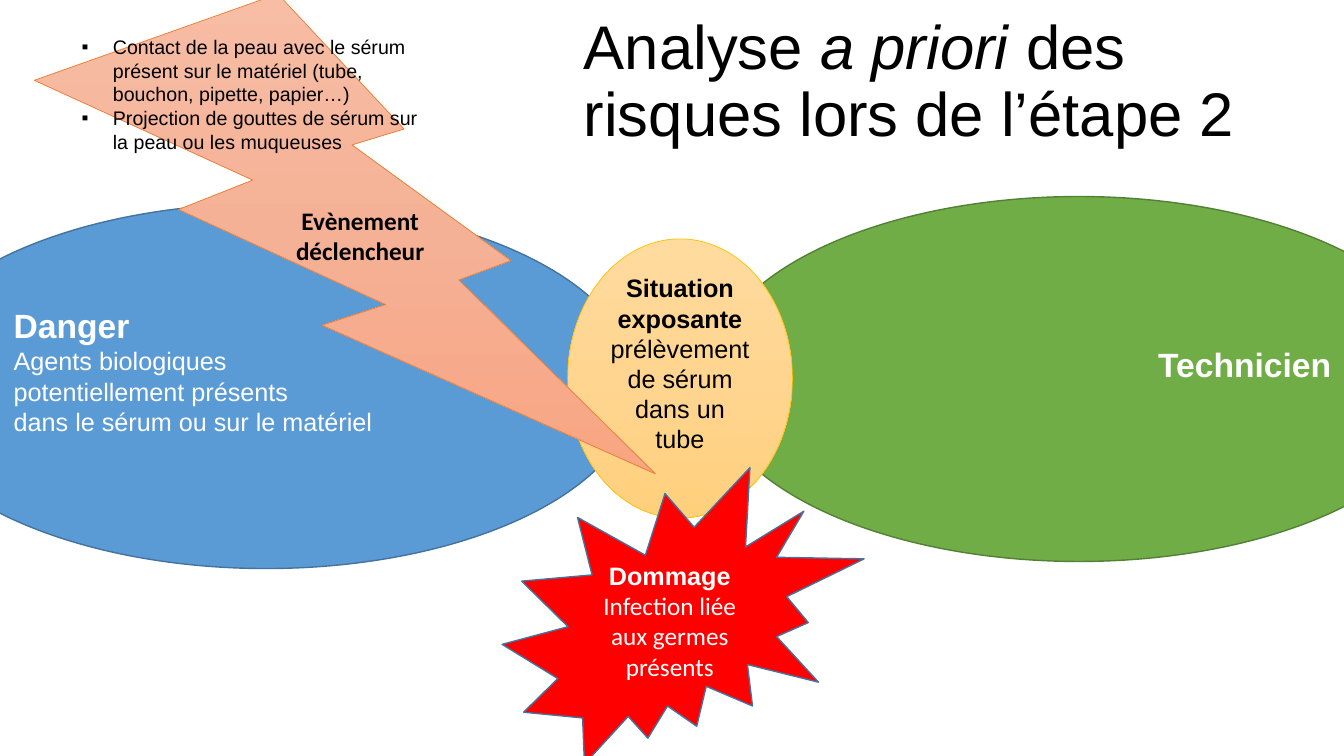
from copy import deepcopy
from dataclasses import dataclass

from lxml import etree
from pptx import Presentation
from pptx.dml.color import RGBColor
from pptx.enum.shapes import MSO_SHAPE as Preset
from pptx.enum.text import MSO_ANCHOR as Anchor, MSO_AUTO_SIZE as AutoSize, PP_ALIGN as Align
from pptx.oxml.ns import qn
from pptx.util import Inches, Pt


@dataclass(frozen=True)
class Theme:
    font: str = "Arial"
    alternate_font: str = "Calibri"
    black: str = "000000"
    white: str = "FFFFFF"
    blue: str = "5B9BD5"
    blue_line: str = "43739E"
    green: str = "70AD47"
    green_line: str = "538035"
    red: str = "FF0000"
    yellow: tuple = ("FFDB9E", "FFD590", "FFD07C")
    yellow_line: str = "FFC000"
    orange: tuple = ("F7BDA5", "F5B196", "F8A582")
    orange_line: str = "ED7D31"
    title_size: int = 44
    heading_size: int = 24
    text_size: int = 18
    list_size: int = 14


class RiskSlide:
    def __init__(self, presentation, theme):
        self.theme = theme
        self.slide = presentation.slides.add_slide(presentation.slide_layouts[1])

    def place(self, shape, box):
        shape.left, shape.top, shape.width, shape.height = map(Inches, box)

    def add_run(self, paragraph, text, size, color, bold=False, italic=False, font=None):
        run = paragraph.add_run()
        run.text = text
        run.font.name = font or self.theme.font
        run.font.size = Pt(size)
        run.font.bold = bold
        run.font.italic = italic
        run.font.color.rgb = RGBColor.from_string(color)

    def paragraphs(self, frame, count):
        return [frame.paragraphs[0]] + [frame.add_paragraph() for _ in range(count - 1)]

    def title(self, box, parts):
        title = self.slide.shapes.title
        self.place(title, box)
        frame = title.text_frame
        frame.vertical_anchor = Anchor.MIDDLE
        frame.auto_size = AutoSize.NONE
        paragraph = frame.paragraphs[0]
        paragraph.alignment = Align.LEFT
        paragraph.line_spacing = 0.9
        for text, italic in parts:
            self.add_run(paragraph, text, self.theme.title_size, self.theme.black, italic=italic)

    def bullet_list(self, box, items):
        body = self.slide.placeholders[1]
        self.place(body, box)
        # Bring the list in front of the bolt
        self.slide.shapes.element.append(body.element)
        frame = body.text_frame
        frame.auto_size = AutoSize.NONE
        frame.vertical_anchor = Anchor.TOP
        for paragraph, text in zip(self.paragraphs(frame, len(items)), items):
            paragraph.level = 1
            paragraph.alignment = Align.LEFT
            paragraph.space_before = Pt(0)
            properties = paragraph._p.get_or_add_pPr()
            properties.set("marL", str(Inches(0.81)))
            properties.set("indent", str(Inches(-0.31)))
            etree.SubElement(properties, qn("a:buChar"), char="▪")
            self.add_run(paragraph, text, self.theme.list_size, self.theme.black)

    def gradient(self, fill, colors):
        fill.gradient()
        fill.gradient_angle = 270
        stop_list = fill._xPr.find(qn("a:gradFill")).find(qn("a:gsLst"))
        stop_list.insert(1, deepcopy(stop_list[0]))
        for index, (stop, color) in enumerate(zip(fill.gradient_stops, colors)):
            stop.position = index / (len(colors) - 1)
            stop.color.rgb = RGBColor.from_string(color)

    def shape(self, preset, box, fill, line, lines, color,
              line_width=1, alignment=Align.CENTER, bottom_inset=0.05):
        """Each line holds text, size, bold and font."""
        shape = self.slide.shapes.add_shape(preset, *map(Inches, box))
        shape.shadow.inherit = False
        if isinstance(fill, tuple):
            self.gradient(shape.fill, fill)
        else:
            shape.fill.solid()
            shape.fill.fore_color.rgb = RGBColor.from_string(fill)
        shape.line.color.rgb = RGBColor.from_string(line)
        shape.line.width = Pt(line_width)
        frame = shape.text_frame
        frame.word_wrap = True
        frame.vertical_anchor = Anchor.MIDDLE
        frame.margin_bottom = Inches(bottom_inset)
        for paragraph, (text, size, bold, font) in zip(self.paragraphs(frame, len(lines)), lines):
            paragraph.alignment = alignment
            self.add_run(paragraph, text, size, color, bold=bold, font=font)


def main():
    theme = Theme()
    presentation = Presentation()
    presentation.slide_width = Inches(13.33)
    presentation.slide_height = Inches(7.5)
    risk = RiskSlide(presentation, theme)
    heading, text = theme.heading_size, theme.text_size
    font, alternate = theme.font, theme.alternate_font
    raised = 0.35  # bottom inset that lifts centred text by half a line

    # Title
    risk.title((5.69, 0.1, 7.36, 1.45), [
        ("Analyse ", False), ("a priori ", True), ("des risques lors de l’étape 2", False)])

    # Danger and technician
    risk.shape(Preset.OVAL, (-1.04, 2.02, 7.36, 3.62), theme.blue, theme.blue_line, [
        ("Danger", heading, True, font),
        ("Agents biologiques", text, False, font),
        ("potentiellement présents", text, False, font),
        ("dans le sérum ou sur le matériel", text, False, font),
    ], theme.white, alignment=Align.LEFT, bottom_inset=raised)
    risk.shape(Preset.OVAL, (7.02, 1.95, 7.36, 3.62), theme.green, theme.green_line, [
        ("Technicien", heading, True, font),
    ], theme.white, alignment=Align.RIGHT, bottom_inset=raised)

    # Exposure situation
    risk.shape(Preset.OVAL, (5.63, 2.37, 2.23, 2.77), theme.yellow, theme.yellow_line, [
        ("Situation exposante", text, True, font),
        ("prélèvement de sérum dans un tube", text, False, font),
    ], theme.black, line_width=0.5, bottom_inset=raised)

    # Triggering event and its causes
    risk.shape(Preset.LIGHTNING_BOLT, (0.34, -0.06, 6.16, 4.76), theme.orange, theme.orange_line, [
        ("Evènement déclencheur", text, True, alternate),
    ], theme.black, line_width=0.5)
    risk.bullet_list((0.21, 0.3, 4.11, 1.28), [
        "Contact de la peau avec le sérum présent sur le matériel (tube, bouchon, pipette, papier…)",
        "Projection de gouttes de sérum sur la peau ou les muqueuses"])

    # Damage
    risk.shape(Preset.EXPLOSION2, (4.98, 4.64, 3.59, 2.94), theme.red, theme.blue_line, [
        ("Dommage", text, True, font),
        ("Infection liée aux germes présents", text, False, alternate),
    ], theme.white)

    presentation.save("out.pptx")


if __name__ == "__main__":
    main()
